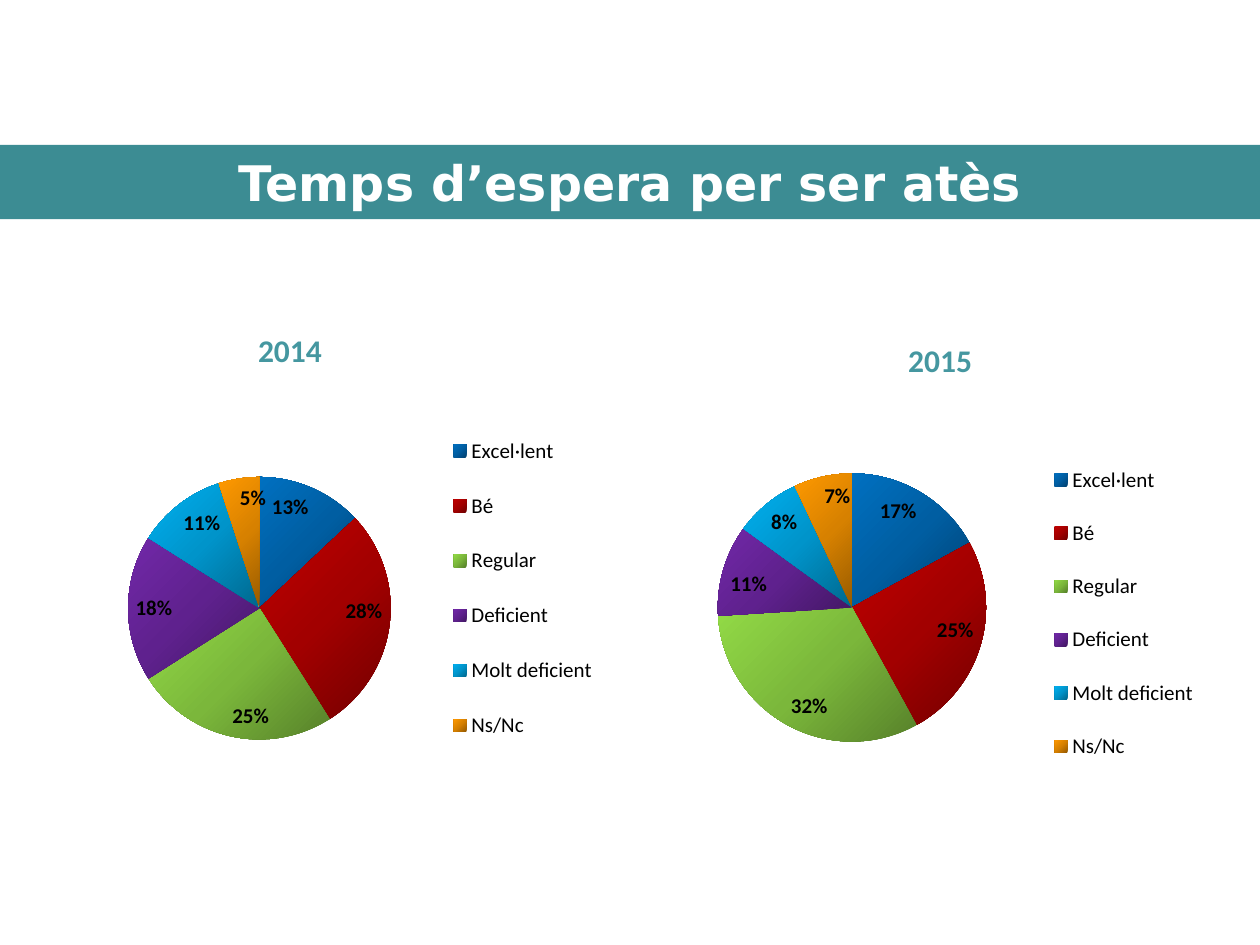
from lxml.etree import SubElement
from pptx import Presentation
from pptx.chart.data import CategoryChartData
from pptx.dml.color import RGBColor
from pptx.enum.chart import XL_CHART_TYPE, XL_LABEL_POSITION, XL_LEGEND_POSITION
from pptx.enum.shapes import MSO_SHAPE
from pptx.enum.text import MSO_ANCHOR, MSO_AUTO_SIZE, PP_ALIGN
from pptx.oxml import parse_xml
from pptx.oxml.ns import nsdecls, qn
from pptx.util import Inches, Pt

RATINGS = ["Excel·lent", "Bé", "Regular", "Deficient", "Molt deficient", "Ns/Nc"]
# Dark, middle and light shade of each rating's slice
SHADES = [
    ("004272", "005EA2", "0070C0"),
    ("720000", "A20000", "C00000"),
    ("57812A", "7BB73B", "92DA46"),
    ("431764", "5F218E", "7128A8"),
    ("00688E", "0094CA", "00B0F0"),
    ("975B00", "D78100", "FF9900"),
]


def color(value):
    return RGBColor.from_string(value)


def manual_layout(left, top, width, height, inner=False):
    """Return a c:layout element placed by fractions of the chart area."""
    layout = parse_xml(f"<c:layout {nsdecls('c')}/>")
    manual = SubElement(layout, qn("c:manualLayout"))
    settings = [("layoutTarget", "inner")] if inner else []
    settings += [("xMode", "edge"), ("yMode", "edge"),
                 ("x", left), ("y", top), ("w", width), ("h", height)]
    for name, value in settings:
        SubElement(manual, qn(f"c:{name}")).set("val", str(value))
    return layout


def fill_gradient(fill_format, shades):
    """Give a slice three evenly spaced stops, dark at the lower right."""
    fill_format.fill.gradient()
    gradient = fill_format._element.find(qn("c:spPr")).find(qn("a:gradFill"))
    stops = gradient.find(qn("a:gsLst"))
    for stop in list(stops):
        stops.remove(stop)
    for index, shade in enumerate(shades):
        stop = SubElement(stops, qn("a:gs"), pos=str(index * 50000))
        SubElement(stop, qn("a:srgbClr"), val=shade)
    gradient.find(qn("a:lin")).set("ang", str(225 * 60000))


class SlideBuilder:
    band_color = "3C8C93"
    year_color = "4597A0"
    title_font = "DejaVu Sans"
    body_font = "Calibri"

    def __init__(self, slide):
        self.slide = slide

    def style(self, font, name, size, hex_color, bold=False):
        font.name = name
        font.size = Pt(size)
        font.bold = bold
        font.color.rgb = color(hex_color)

    def title_band(self, text, left, top, width, height):
        band = self.slide.shapes.add_shape(
            MSO_SHAPE.RECTANGLE, Inches(left), Inches(top), Inches(width), Inches(height))
        band.shadow.inherit = False
        band.fill.solid()
        band.fill.fore_color.rgb = color(self.band_color)
        band.line.fill.background()
        frame = band.text_frame
        frame.text = text
        frame.vertical_anchor = MSO_ANCHOR.MIDDLE
        para = frame.paragraphs[0]
        para.alignment = PP_ALIGN.CENTER
        self.style(para.runs[0].font, self.title_font, 28, "FFFFFF", bold=True)

    def year_label(self, text, left, top, width, height):
        box = self.slide.shapes.add_textbox(
            Inches(left), Inches(top), Inches(width), Inches(height))
        frame = box.text_frame
        frame.word_wrap = True
        frame.auto_size = MSO_AUTO_SIZE.SHAPE_TO_FIT_TEXT
        frame.text = text
        self.style(frame.paragraphs[0].runs[0].font, self.body_font, 18,
                   self.year_color, bold=True)

    def pie(self, values, left, top, plot_area, legend_area):
        data = CategoryChartData()
        data.categories = RATINGS
        data.add_series("Series 1", values)
        chart = self.slide.shapes.add_chart(
            XL_CHART_TYPE.PIE, Inches(left), Inches(top),
            Inches(4.45), Inches(4.53), data).chart
        chart.has_title = False
        self.style(chart.font, "Arial", 18, "000000")

        plot = chart.plots[0]
        plot.vary_by_categories = True
        area = plot._element.getparent()
        for old in area.findall(qn("c:layout")):
            area.remove(old)
        area.insert(0, manual_layout(*plot_area, inner=True))
        for index, shades in enumerate(SHADES):
            fill_gradient_target = plot.series[0].points[index].format
            fill_gradient(fill_gradient_target, shades)

        plot.has_data_labels = True
        labels = plot.data_labels
        labels.show_percentage = True
        labels.show_value = False
        labels.number_format = "0%"
        labels.number_format_is_linked = False
        labels.position = XL_LABEL_POSITION.INSIDE_END
        self.style(labels.font, self.body_font, 12, "000000", bold=True)

        chart.has_legend = True
        legend = chart.legend
        legend.position = XL_LEGEND_POSITION.RIGHT
        legend.include_in_layout = False
        self.style(legend.font, self.body_font, 12, "000000")
        element = legend._element
        for old in element.findall(qn("c:layout")):
            element.remove(old)
        element.find(qn("c:overlay")).addprevious(manual_layout(*legend_area))


def main():
    deck = Presentation()
    deck.slide_width = Inches(10)
    deck.slide_height = Inches(7.5)
    page = SlideBuilder(deck.slides.add_slide(deck.slide_layouts[6]))

    page.title_band("Temps d’espera per ser atès", 0, 1.15, 10, 0.59)
    page.pie([13, 28, 25, 18, 11, 5], 0.39, 2.11,
             (0.14, 0.37, 0.47, 0.46), (0.7, 0.25, 0.29, 0.63))
    page.pie([17, 25, 32, 11, 8, 7], 5.16, 2.58,
             (0.12, 0.26, 0.48, 0.47), (0.7, 0.2, 0.29, 0.61))
    page.year_label("2014", 1.95, 2.58, 0.86, 0.4)
    page.year_label("2015", 7.11, 2.66, 0.78, 0.4)
    deck.save("out.pptx")


if __name__ == "__main__":
    main()
